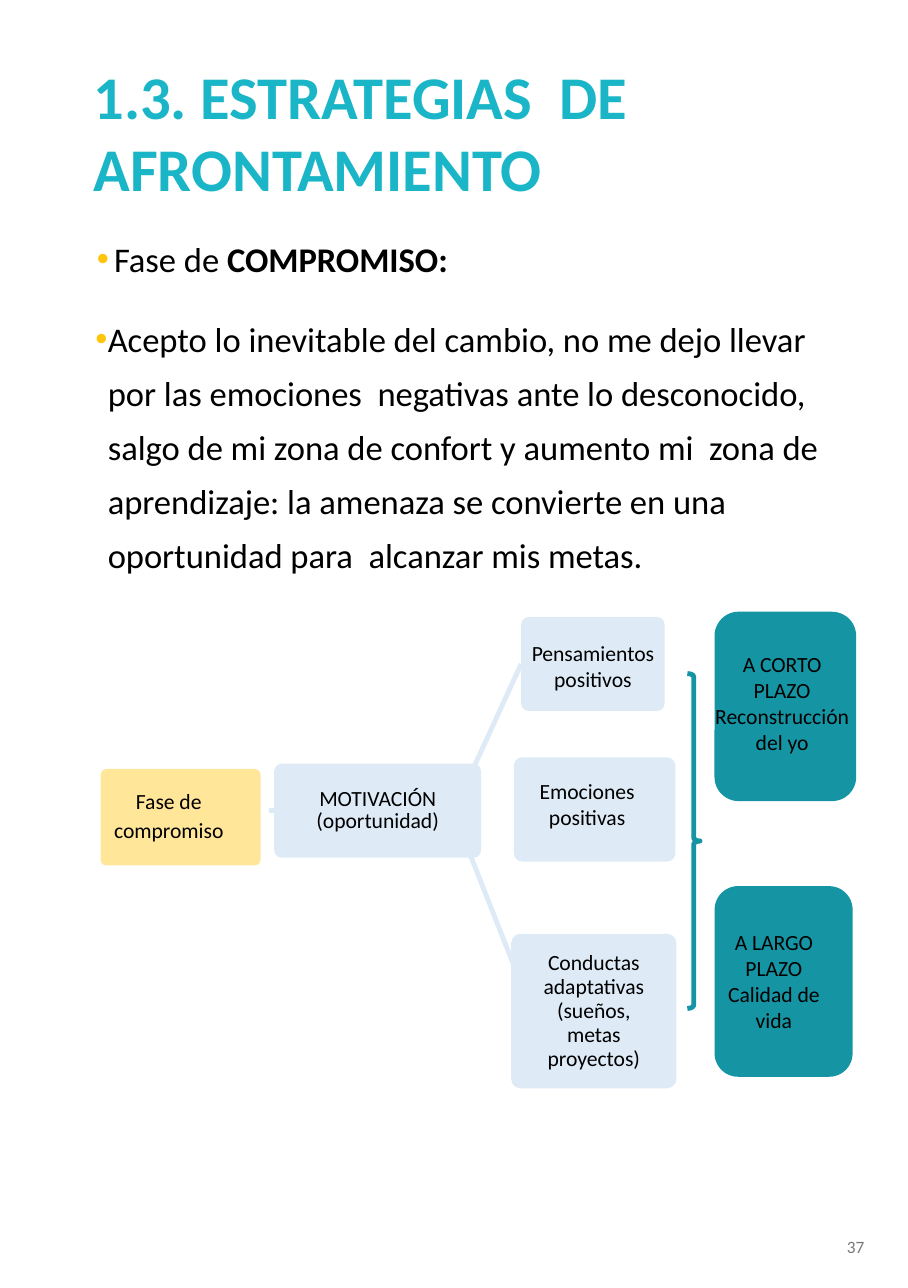
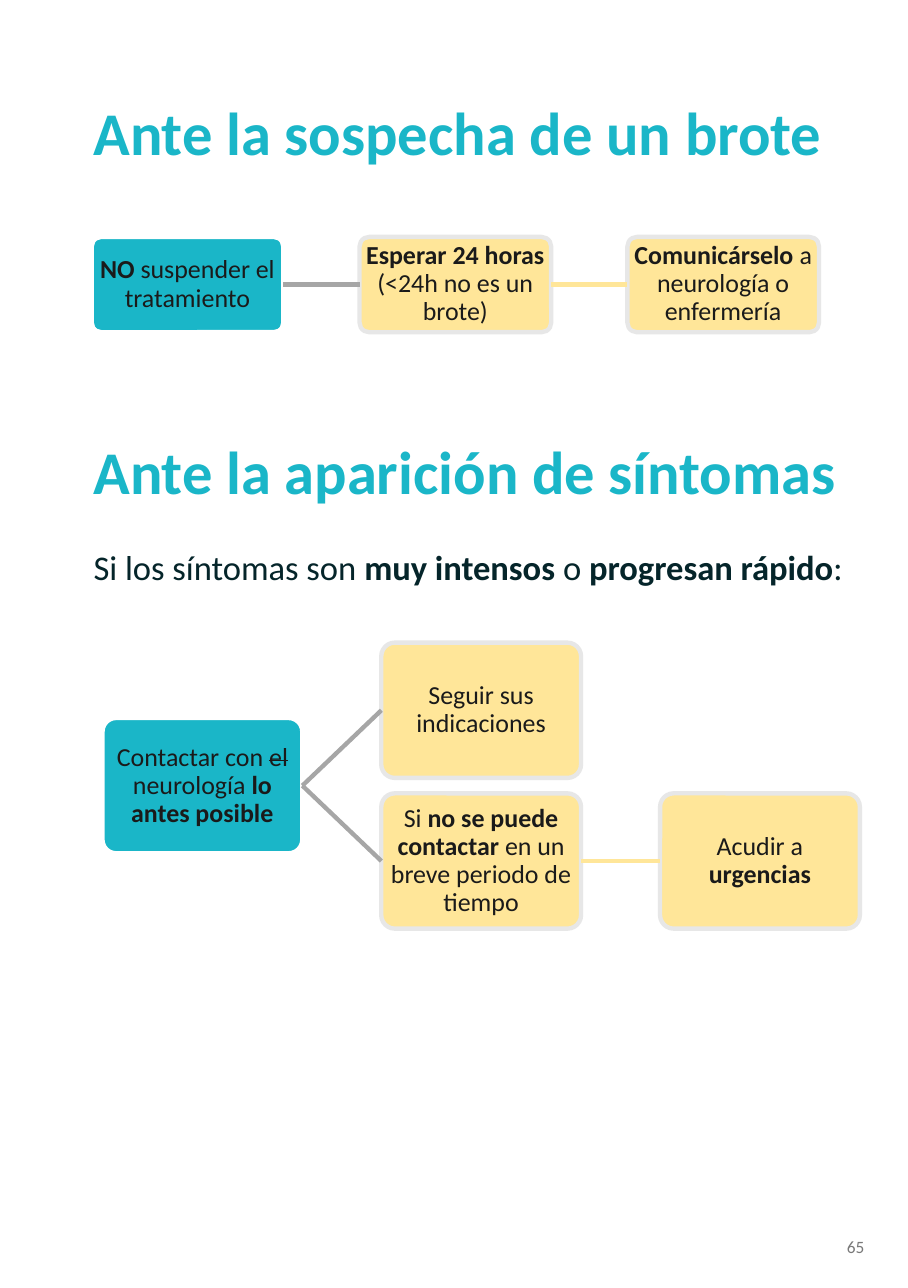
from dataclasses import dataclass

from lxml import etree
from pptx import Presentation
from pptx.dml.color import RGBColor
from pptx.enum.shapes import MSO_CONNECTOR, MSO_SHAPE
from pptx.enum.text import MSO_ANCHOR, MSO_AUTO_SIZE, PP_ALIGN
from pptx.oxml.ns import qn
from pptx.util import Inches, Pt

STRAIGHT = MSO_CONNECTOR.STRAIGHT
ROUNDED, BRACE = MSO_SHAPE.ROUNDED_RECTANGLE, MSO_SHAPE.RIGHT_BRACE
TOP, MIDDLE = MSO_ANCHOR.TOP, MSO_ANCHOR.MIDDLE
LEFT, CENTER, RIGHT = PP_ALIGN.LEFT, PP_ALIGN.CENTER, PP_ALIGN.RIGHT
NO_AUTOFIT = MSO_AUTO_SIZE.NONE
SIDE_LEFT, SIDE_RIGHT = 1, 3
TITLE_AND_CONTENT = 1


@dataclass(frozen=True)
class Theme:
    font: str = "Calibri"
    # Colours
    cyan: str = "1AB6C8"
    teal: str = "1595A4"
    yellow: str = "FFE699"
    pale: str = "DEEBF7"
    bullet: str = "FFC50A"
    gray: str = "A6A6A6"
    edge: str = "E7E7E7"
    white: str = "FFFFFF"
    black: str = "000000"
    ink: str = "1A1A1A"
    lead: str = "05252A"
    number: str = "797979"
    # Type sizes in points
    title_size: int = 28
    body_size: int = 16
    step_size: int = 12
    small_size: int = 10
    number_size: int = 8


T = Theme()


class Deck:
    """Holds the style and the current slide; lengths are percent of the slide."""

    def __init__(self, width, height):
        self.prs = Presentation()
        self.prs.slide_width, self.prs.slide_height = Inches(width), Inches(height)
        self.s = None

    def x(self, share):
        return round(self.prs.slide_width * share / 100)

    def y(self, share):
        return round(self.prs.slide_height * share / 100)

    def rect(self, left, top, width, height):
        return self.x(left), self.y(top), self.x(width), self.y(height)

    def place(self, sp, at):
        sp.left, sp.top, sp.width, sp.height = self.rect(*at)

    # Text
    def set_text(self, sp, paragraphs, size, color, align=LEFT, anchor=MIDDLE,
                 bold=False, spacing=None, insets=(0, 0, 0, 0), wrap=True):
        """A paragraph is a list of runs; a run is text or (text, "b" or "s")."""
        tf = sp.text_frame
        tf.word_wrap, tf.auto_size, tf.vertical_anchor = wrap, NO_AUTOFIT, anchor
        (tf.margin_left, tf.margin_top,
         tf.margin_right, tf.margin_bottom) = (Pt(v) for v in insets)
        for i, runs in enumerate(paragraphs):
            p = tf.paragraphs[0] if i == 0 else tf.add_paragraph()
            p.alignment, p.line_spacing = align, spacing
            p.space_before = Pt(0)
            for run in runs:
                text, mark = (run, "") if isinstance(run, str) else run
                r = p.add_run()
                r.text = text
                r.font.name, r.font.size = T.font, Pt(size)
                r.font.bold = bold or mark == "b"
                r.font.color.rgb = RGBColor.from_string(color)
                if mark == "s":
                    r.font._element.set("strike", "sngStrike")
        return tf

    def bullet(self, p, margin=0.0, indent=0.0, char=None):
        pPr = p._p.get_or_add_pPr()
        pPr.set("marL", str(Inches(margin)))
        pPr.set("indent", str(Inches(indent)))
        if char is None:
            etree.SubElement(pPr, qn("a:buNone"))
            return
        color = etree.SubElement(pPr, qn("a:buClr"))
        etree.SubElement(color, qn("a:srgbClr")).set("val", T.bullet)
        etree.SubElement(pPr, qn("a:buChar")).set("char", char)

    def heading(self, sp, text, at):
        self.place(sp, at)
        self.set_text(sp, [[text]], T.title_size, T.cyan, bold=True)

    def slide(self, title, number):
        layout = self.prs.slide_layouts[TITLE_AND_CONTENT]
        self.s = self.prs.slides.add_slide(layout)
        self.heading(self.s.shapes.title, title, (10.3, 4.4, 84, 11.6))
        sp = self.s.shapes.add_textbox(*self.rect(74.4, 94.1, 22.5, 5.3))
        self.set_text(sp, [[number]], T.number_size, T.number, RIGHT,
                      insets=(7, 4, 7, 4))

    def subheading(self, text, at):
        self.heading(self.s.shapes.add_textbox(*self.rect(*at)), text, at)

    def body(self, paragraphs, at, color, **style):
        sp = self.s.placeholders[1]
        self.place(sp, at)
        return self.set_text(sp, paragraphs, T.body_size, color, **style).paragraphs

    # Shapes
    def line_style(self, line, color, width):
        line.color.rgb = RGBColor.from_string(color)
        line.width = Pt(width)

    def box(self, paragraphs, at, fill, edge=None, corner=0.1,
            size=T.small_size, color=T.black, **style):
        sp = self.s.shapes.add_shape(ROUNDED, *self.rect(*at))
        sp.shadow.inherit = False
        sp.adjustments[0] = corner
        sp.fill.solid()
        sp.fill.fore_color.rgb = RGBColor.from_string(fill)
        if edge:
            self.line_style(sp.line, edge, 2)
        else:
            sp.line.fill.background()
        self.set_text(sp, paragraphs, size, color, CENTER, **style)
        return sp

    def step(self, runs, at, first=False):
        fill, edge = (T.cyan, T.white) if first else (T.yellow, T.edge)
        return self.box([runs], at, fill, edge, size=T.step_size,
                        color=T.ink, spacing=0.9)

    def brace(self, at):
        sp = self.s.shapes.add_shape(BRACE, *self.rect(*at))
        sp.shadow.inherit = False
        sp.adjustments[0] = 0.25
        sp.fill.background()
        self.line_style(sp.line, T.teal, 2.25)

    def link(self, start, end, color, width=2):
        """Each end is a point or a (shape, side) pair."""
        c = self.s.shapes.add_connector(STRAIGHT, 0, 0, 0, 0)
        if isinstance(start[0], (int, float)):
            c.begin_x, c.begin_y = self.x(start[0]), self.y(start[1])
        else:
            c.begin_connect(*start)
        if isinstance(end[0], (int, float)):
            c.end_x, c.end_y = self.x(end[0]), self.y(end[1])
        else:
            c.end_connect(*end)
        self.line_style(c.line, color, width)
        etree.SubElement(c._element.spPr, qn("a:effectLst"))

    def join(self, left, right, color):
        self.link((left, SIDE_RIGHT), (right, SIDE_LEFT), color)


def coping_slide(d):
    d.slide("1.3. ESTRATEGIAS  DE AFRONTAMIENTO", "37")

    # Bulleted text
    phase, accept = d.body(
        [["Fase de ", ("COMPROMISO:", "b")],
         ["Acepto lo inevitable del cambio, no me dejo llevar por las emociones  "
          "negativas ante lo desconocido, salgo de mi zona de confort y aumento mi  "
          "zona de aprendizaje: la amenaza se convierte en una oportunidad para  "
          "alcanzar mis metas."]],
        (10.5, 16.9, 82.5, 32.4), T.black, anchor=TOP, spacing=Pt(25),
        insets=(0, 3.5, 0, 0))
    phase.space_before, accept.space_before = Pt(3.4), Pt(12)
    d.bullet(phase, 0.12, -0.11, "•")
    d.bullet(accept, 0.08, -0.11, "•")

    # Phase, motivation and its three results
    d.box([["Fase de compromiso"]], (11.1, 59.7, 17.6, 7.5), T.yellow, corner=0.06,
          spacing=Pt(13.4), insets=(0, 0, 11, 3))
    motivation = d.box([["MOTIVACIÓN"], ["(oportunidad)"]], (30.2, 59.3, 22.8, 7.3),
                       T.pale, corner=0.08, spacing=Pt(10.1))
    thoughts = d.box([["Pensamientos positivos"]], (57.4, 47.9, 15.8, 7.3),
                     T.pale, corner=0.08, insets=(0, 2, 0, 0))
    d.box([["Emociones"], ["positivas"]], (56.6, 58.8, 17.8, 8.1), T.pale,
          corner=0.08, insets=(0, 0, 7, 5))
    d.box([["Conductas adaptativas (sueños, metas proyectos)"]],
          (56.3, 72.5, 18.2, 12), T.pale, corner=0.06, spacing=0.92,
          insets=(7, 0, 7, 0))
    d.link((29.6, 62.95), (motivation, SIDE_LEFT), T.pale, 2.25)
    d.link((52.1, 59.7), (thoughts, SIDE_LEFT), T.pale, 2.25)
    d.link((49.4, 62.1), (57.4, 76.4), T.pale, 2.25)

    # Outcomes
    d.brace((75.7, 52.3, 1.4, 26))
    d.box([["A CORTO"], ["PLAZO"], ["Reconstrucción"], ["del yo"]],
          (78.7, 47.5, 15.6, 14.7), T.teal, corner=0.17, wrap=False,
          insets=(0, 0, 3, 3))
    d.box([["A LARGO PLAZO"], ["Calidad de vida"]], (78.7, 68.8, 15.2, 14.8),
          T.teal, corner=0.17, insets=(0, 0, 9, 1))


def relapse_slide(d):
    d.slide("Ante la sospecha de un brote", "65")

    # Row of three steps
    texts = [[("NO ", "b"), "suspender el tratamiento"],
             [("Esperar 24 horas ", "b"), "(<24h no es un brote)"],
             [("Comunicárselo ", "b"), "a neurología o enfermería"]]
    steps = [d.step(runs, (10.1 + 29.5 * i, 18.4, 21.1, 7.4), first=i == 0)
             for i, runs in enumerate(texts)]
    for left, right, color in zip(steps, steps[1:], (T.gray, T.yellow)):
        d.join(left, right, color)

    # Second heading and its lead line
    d.subheading("Ante la aparición de síntomas", (10.3, 33.5, 84, 6))
    lead, = d.body([["Si los síntomas son ", ("muy intensos ", "b"), "o ",
                     ("progresan rápido", "b"), ":"]], (10.3, 42, 84, 4), T.lead)
    d.bullet(lead)

    # Branching steps
    def at(column, row):
        return 11.3 + 30.7 * column, 55.75 + 5.85 * row, 22, 10.5

    contact = d.step(["Contactar con ", ("el ", "s"), "neurología ",
                      ("lo antes posible", "b")], at(0, 0), first=True)
    follow = d.step(["Seguir sus indicaciones"], at(1, -1))
    no_contact = d.step(["Si ", ("no se puede contactar", "b"),
                         " en un breve periodo de tiempo"], at(1, 1))
    urgent = d.step(["Acudir a ", ("urgencias", "b")], at(2, 1))
    d.join(contact, follow, T.gray)
    d.join(contact, no_contact, T.gray)
    d.join(no_contact, urgent, T.yellow)


def main():
    d = Deck(5.83, 8.27)
    coping_slide(d)
    relapse_slide(d)
    d.prs.save("out.pptx")


if __name__ == "__main__":
    main()
